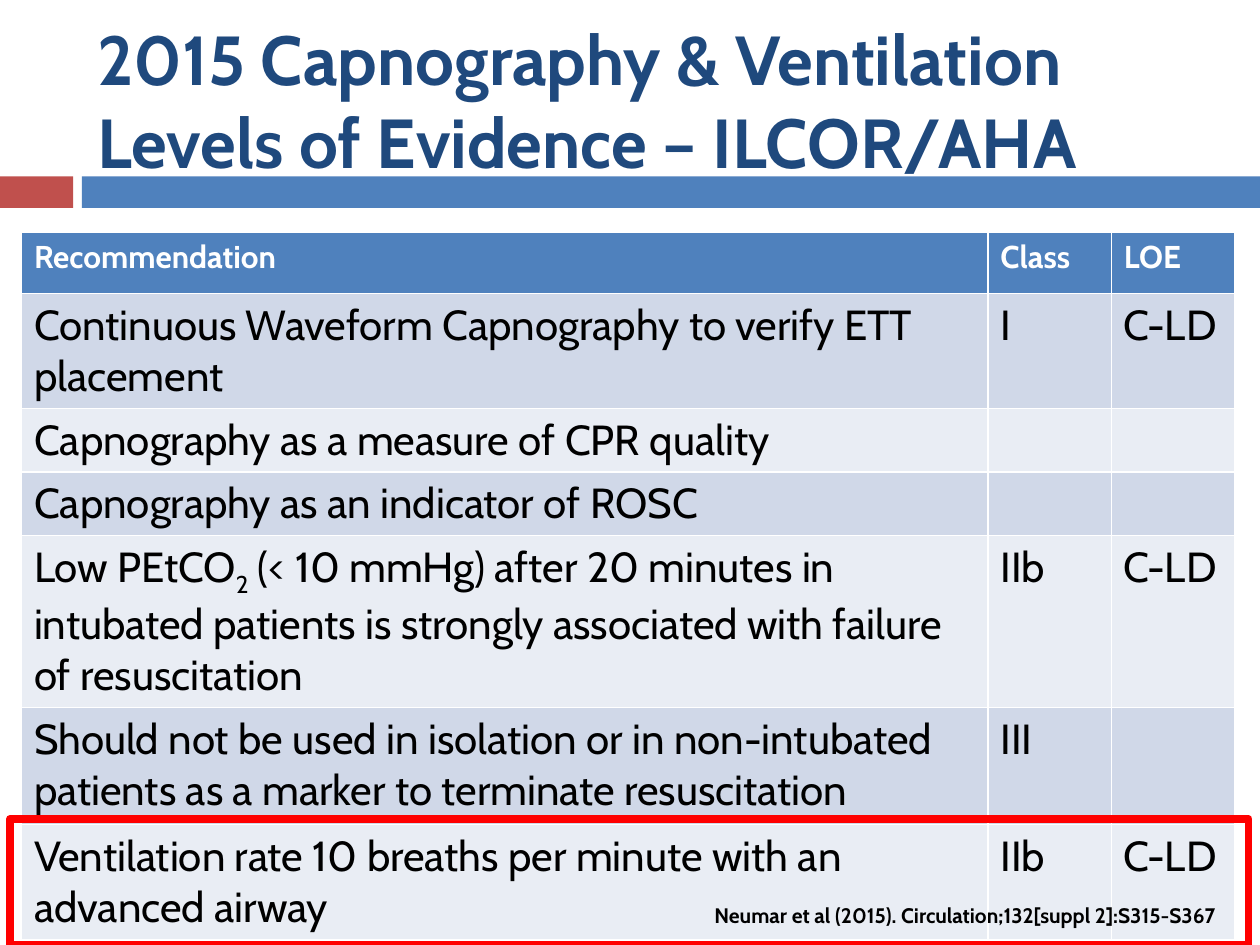
from pptx import Presentation
from pptx.dml.color import RGBColor
from pptx.enum import shapes, text
from pptx.util import Inches, Pt

COLORS = {
    "navy": "1F497D", "blue": "4F81BD", "brick": "C0504D", "red": "FF0000",
    "band_dark": "D0D8E8", "band_light": "E9EDF4",
    "white": "FFFFFF", "black": "000000",
}
FONT = "Cabin"
HEADER = ("Recommendation", "Class", "LOE")
# A tuple holds alternating normal and subscript parts.
RECOMMENDATIONS = [
    ("Continuous Waveform Capnography to verify ETT placement", "I", "C-LD"),
    ("Capnography as a measure of CPR quality", "", ""),
    ("Capnography as an indicator of ROSC", "", ""),
    (("Low PEtCO", "2", " (< 10 mmHg) after 20 minutes in intubated patients "
      "is strongly associated with failure of resuscitation"), "IIb", "C-LD"),
    ("Should not be used in isolation or in non-intubated patients "
     "as a marker to terminate resuscitation", "III", ""),
    ("Ventilation rate 10 breaths per minute with an advanced airway",
     "IIb", "C-LD"),
]
COLUMN_WIDTHS = (7.67, 0.98, 0.98)
ROW_HEIGHTS = (0.49, 0.49, 0.49, 0.49, 1.34, 0.93, 0.85)


def rgb(name):
    return RGBColor.from_string(COLORS[name])


def add_text(p, content, size=24, color="black", bold=False, subscript=False):
    """Add runs to a paragraph, with a line break at each newline."""
    for i, line in enumerate(content.split("\n")):
        if i:
            p.add_line_break()
        r = p.add_run()
        r.text = line
        r.font.name = FONT
        r.font.size = Pt(size)
        r.font.bold = bold
        r.font.color.rgb = rgb(color)
        if subscript:
            r._r.get_or_add_rPr().set("baseline", "-25000")


def add_rect(slide, left, top, width, height, fill=None, line=None, weight=1):
    sp = slide.shapes.add_shape(
        shapes.MSO_SHAPE.RECTANGLE,
        Inches(left), Inches(top), Inches(width), Inches(height))
    sp.shadow.inherit = False
    if fill:
        sp.fill.solid()
        sp.fill.fore_color.rgb = rgb(fill)
    else:
        sp.fill.background()
    if line:
        sp.line.color.rgb = rgb(line)
        sp.line.width = Pt(weight)
    else:
        sp.line.fill.background()


def set_title(slide, content):
    title = slide.shapes.title
    title.left, title.top = Inches(0.67), Inches(0.25)
    title.width, title.height = Inches(8.92), Inches(1.08)
    tf = title.text_frame
    tf.auto_size = text.MSO_AUTO_SIZE.NONE
    tf.vertical_anchor = text.MSO_ANCHOR.MIDDLE
    p = tf.paragraphs[0]
    p.alignment = text.PP_ALIGN.LEFT
    add_text(p, content, size=39.6, color="navy", bold=True)


def fill_cell(cell, content, fill, **fmt):
    cell.fill.solid()
    cell.fill.fore_color.rgb = rgb(fill)
    parts = content if isinstance(content, tuple) else (content,)
    for i, part in enumerate(parts):
        if part:
            add_text(cell.text_frame.paragraphs[0], part,
                     subscript=i % 2 == 1, **fmt)


def add_evidence_table(slide):
    rows = [HEADER, *RECOMMENDATIONS]
    table = slide.shapes.add_table(
        len(rows), len(HEADER), Inches(0.17), Inches(1.84),
        Inches(sum(COLUMN_WIDTHS)), Inches(sum(ROW_HEIGHTS))).table
    for column, width in zip(table.columns, COLUMN_WIDTHS):
        column.width = Inches(width)
    for i, (row, height) in enumerate(zip(rows, ROW_HEIGHTS)):
        table.rows[i].height = Inches(height)
        if i == 0:
            fill, fmt = "blue", dict(size=18, color="white", bold=True)
        else:
            fill, fmt = ("band_dark" if i % 2 else "band_light"), {}
        for j, content in enumerate(row):
            fill_cell(table.cell(i, j), content, fill, **fmt)


def add_citation(slide, content):
    box = slide.shapes.add_textbox(
        Inches(5.67), Inches(7.16), Inches(4.13), Inches(0.25))
    tf = box.text_frame
    tf.word_wrap = True
    tf.margin_left = tf.margin_top = 0
    tf.margin_right, tf.margin_bottom = Inches(0.1), Inches(0.05)
    add_text(tf.paragraphs[0], content, size=12, bold=True)


def main():
    prs = Presentation()
    prs.slide_width, prs.slide_height = Inches(10), Inches(7.5)
    slide = prs.slides.add_slide(prs.slide_layouts[5])
    add_rect(slide, 0, 1.4, 0.58, 0.25, fill="brick")
    add_rect(slide, 0.65, 1.4, 9.35, 0.25, fill="blue")
    set_title(slide, "2015 Capnography & Ventilation\n"
                     "Levels of Evidence – ILCOR/AHA")
    add_evidence_table(slide)
    add_citation(slide,
                 "Neumar et al (2015). Circulation;132[suppl 2]:S315-S367")
    add_rect(slide, 0.08, 6.5, 9.83, 1, line="red", weight=4.5)
    prs.save("out.pptx")


if __name__ == "__main__":
    main()
